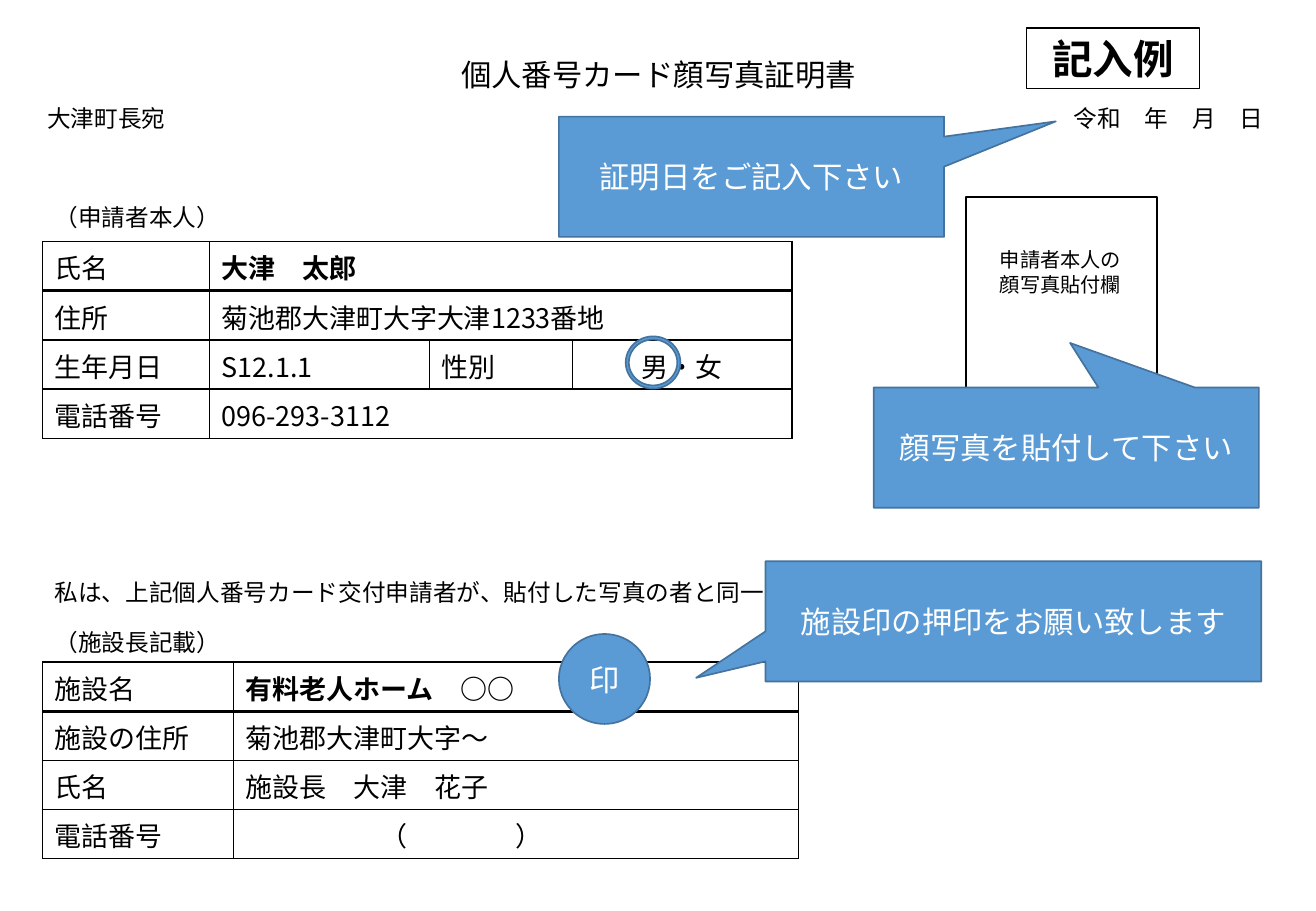
from lxml import etree
from pptx import Presentation
from pptx import util as u
from pptx.dml.color import RGBColor
from pptx.enum import shapes, text
from pptx.oxml import ns

SIZE = (10.83, 7.5)
COLORS = {"ink": "000000", "paper": "FFFFFF", "blue": "5B9BD5", "edge": "43739E"}
CJK = "Noto Sans CJK JP"
MS = shapes.MSO_SHAPE
LEFT, CENTER = text.PP_ALIGN.LEFT, text.PP_ALIGN.CENTER
TOP, MIDDLE = text.MSO_ANCHOR.TOP, text.MSO_ANCHOR.MIDDLE
FIT, FIXED = text.MSO_AUTO_SIZE.SHAPE_TO_FIT_TEXT, text.MSO_AUTO_SIZE.NONE

PLAIN = {"ink": "ink", "font": CJK, "size": 14, "bold": False, "align": LEFT,
         "anchor": TOP, "fit": FIT, "fill": None, "line": None, "width": 1}
STYLES = {
    "body": PLAIN,
    "small": {**PLAIN, "size": 12},
    "title": {**PLAIN, "size": 18, "align": CENTER},
    "frame": {**PLAIN, "line": "ink", "fit": FIXED},
    "stamp": {**PLAIN, "size": 24, "bold": True, "align": CENTER,
              "line": "ink", "width": 0.75},
    "note": {**PLAIN, "ink": "paper", "font": "Calibri", "size": 18, "align": CENTER,
             "anchor": MIDDLE, "fit": FIXED, "fill": "blue", "line": "edge"},
}

FORM = [
    ("title", None, (33.7, 5.47, 32.69, 5.33), ["個人番号カード顔写真証明書"], ()),
    ("body", None, (2.68, 10.8, 32.69, 4.53), ["大津町長宛"], ()),
    ("frame", MS.RECTANGLE, (73.41, 21.6, 14.5, 26.27), [], ()),
    ("small", None, (75.07, 26.53, 11.27, 6.67), ["申請者本人の", "顔写真貼付欄"], ()),
    ("body", None, (3.23, 62.8, 56.97, 4.53),
     ["私は、上記個人番号カード交付申請者が、貼付した写真の者と同一"], ()),
    ("body", None, (3.23, 21.6, 56.97, 4.53), ["（申請者本人）"], ()),
    ("body", None, (3.23, 68.27, 56.97, 4.53), ["（施設長記載）"], ()),
    ("body", None, (80.7, 10.8, 17.64, 4.53), ["令和　年　月　日"], ()),
    ("stamp", MS.RECTANGLE, (78.02, 3.07, 13.11, 6.67), ["記入例"], ()),
]
NOTES = [
    ("note", MS.RECTANGULAR_CALLOUT, (58.17, 61.6, 37.67, 13.2),
     ["施設印の押印をお願い致します"], (-0.64, 0.47)),
    ("note", MS.FLOWCHART_CONNECTOR, (42.47, 69.6, 6.93, 9.87), ["印"], ()),
    ("note", MS.RECTANGULAR_CALLOUT, (66.39, 42.53, 29.27, 13.2),
     ["顔写真を貼付して下さい"], (0.01, -0.87)),
    ("note", MS.RECTANGULAR_CALLOUT, (42.47, 12.8, 29.27, 13.2),
     ["証明日をご記入下さい"], (0.79, -0.46)),
    ("note", MS.DONUT, (47.55, 36.93, 4.16, 5.73), [], (0.06,)),
]
TABLES = [
    ((3.23, 26.53, 56.97, 21.6), (22.3, 29.3, 19.1, 29.3), [
        ["氏名", "大津　太郎"],
        ["住所", "菊池郡大津町大字大津1233番地"],
        ["生年月日", "S12.1.1", "性別", "男・女"],
        ["電話番号", "096-293-3112"]]),
    ((3.23, 72.67, 57.43, 21.6), (25.3, 74.7), [
        ["施設名", "有料老人ホーム　○○"],
        ["施設の住所", "菊池郡大津町大字～"],
        ["氏名", "施設長　大津　花子"],
        ["電話番号", "\t（\t）"]]),
]
TABS = (80, 160)


def color(name):
    return RGBColor.from_string(COLORS[name])


def place(box):
    return [u.Inches(share * SIZE[i % 2] / 100) for i, share in enumerate(box)]


def write(p, line, style):
    p.alignment = style["align"]
    if "\t" in line:
        tabs = etree.SubElement(p._p.get_or_add_pPr(), ns.qn("a:tabLst"))
        for stop in TABS:
            etree.SubElement(tabs, ns.qn("a:tab"), pos=str(u.Pt(stop)), algn="l")
    r = p.add_run()
    r.text = line
    for key, value in {"name": style["font"], "size": u.Pt(style["size"]),
                       "bold": style["bold"]}.items():
        setattr(r.font, key, value)
    r.font.color.rgb = color(style["ink"])
    ea = etree.Element(ns.qn("a:ea"), typeface=CJK)
    r._r.rPr.find(ns.qn("a:latin")).addnext(ea)


def paint(s, style):
    s.shadow.inherit = False
    if style["fill"]:
        s.fill.solid()
        s.fill.fore_color.rgb = color(style["fill"])
    else:
        s.fill.background()
    s.line.color.rgb = color(style["line"])
    s.line.width = u.Pt(style["width"])


def add_item(slide, name, kind, box, lines, adjustments):
    style = STYLES[name]
    if kind is None:
        s = slide.shapes.add_textbox(*place(box))
    else:
        s = slide.shapes.add_shape(kind, *place(box))
        paint(s, style)
    for i, value in enumerate(adjustments):
        s.adjustments[i] = value
    tf = s.text_frame
    for key, value in {"word_wrap": True, "auto_size": style["fit"],
                       "vertical_anchor": style["anchor"]}.items():
        setattr(tf, key, value)
    for i, line in enumerate(lines):
        write(tf.add_paragraph() if i else tf.paragraphs[0], line, style)


def border(cell, row):
    widths = {"L": 1, "R": 1, "T": 2 if row == 1 else 1, "B": 2 if row == 0 else 1}
    for side, width in widths.items():
        ln = etree.SubElement(cell._tc.get_or_add_tcPr(), ns.qn("a:ln" + side),
                              w=str(u.Pt(width)))
        fill = etree.SubElement(ln, ns.qn("a:solidFill"))
        etree.SubElement(fill, ns.qn("a:srgbClr"), val=COLORS["ink"])


def add_form_table(slide, box, shares, rows):
    x, y, w, h = place(box)
    table = slide.shapes.add_table(len(rows), len(shares), x, y, w, h).table
    table.first_row = table.horz_banding = False
    for column, share in zip(table.columns, shares):
        column.width = int(w * share / 100)
    for i, values in enumerate(rows):
        table.rows[i].height = int(h / len(rows))
        for j in range(len(shares)):
            cell = table.cell(i, j)
            border(cell, i)
            cell.fill.solid()
            cell.fill.fore_color.rgb = color("paper")
        if len(values) < len(shares):
            table.cell(i, len(values) - 1).merge(table.cell(i, len(shares) - 1))
        for j, value in enumerate(values):
            style = {**PLAIN, "size": 16, "bold": i == 0 and j == 1,
                     "align": CENTER if j == 3 else LEFT}
            write(table.cell(i, j).text_frame.paragraphs[0], value, style)


def main():
    prs = Presentation()
    prs.slide_width, prs.slide_height = map(u.Inches, SIZE)
    slide = prs.slides.add_slide(prs.slide_layouts[6])
    for item in FORM:
        add_item(slide, *item)
    for item in TABLES:
        add_form_table(slide, *item)
    for item in NOTES:
        add_item(slide, *item)
    prs.save("out.pptx")


if __name__ == "__main__":
    main()
